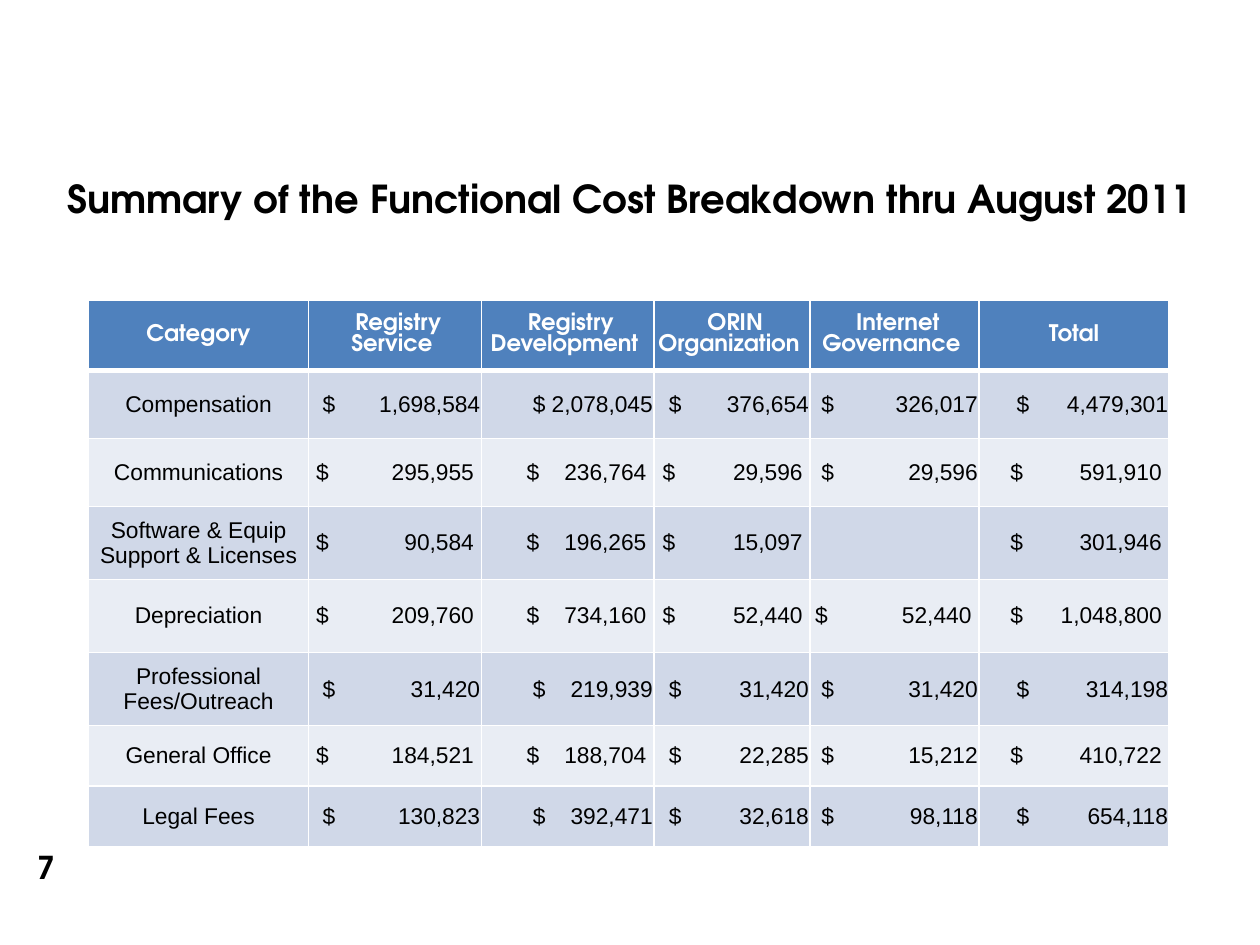
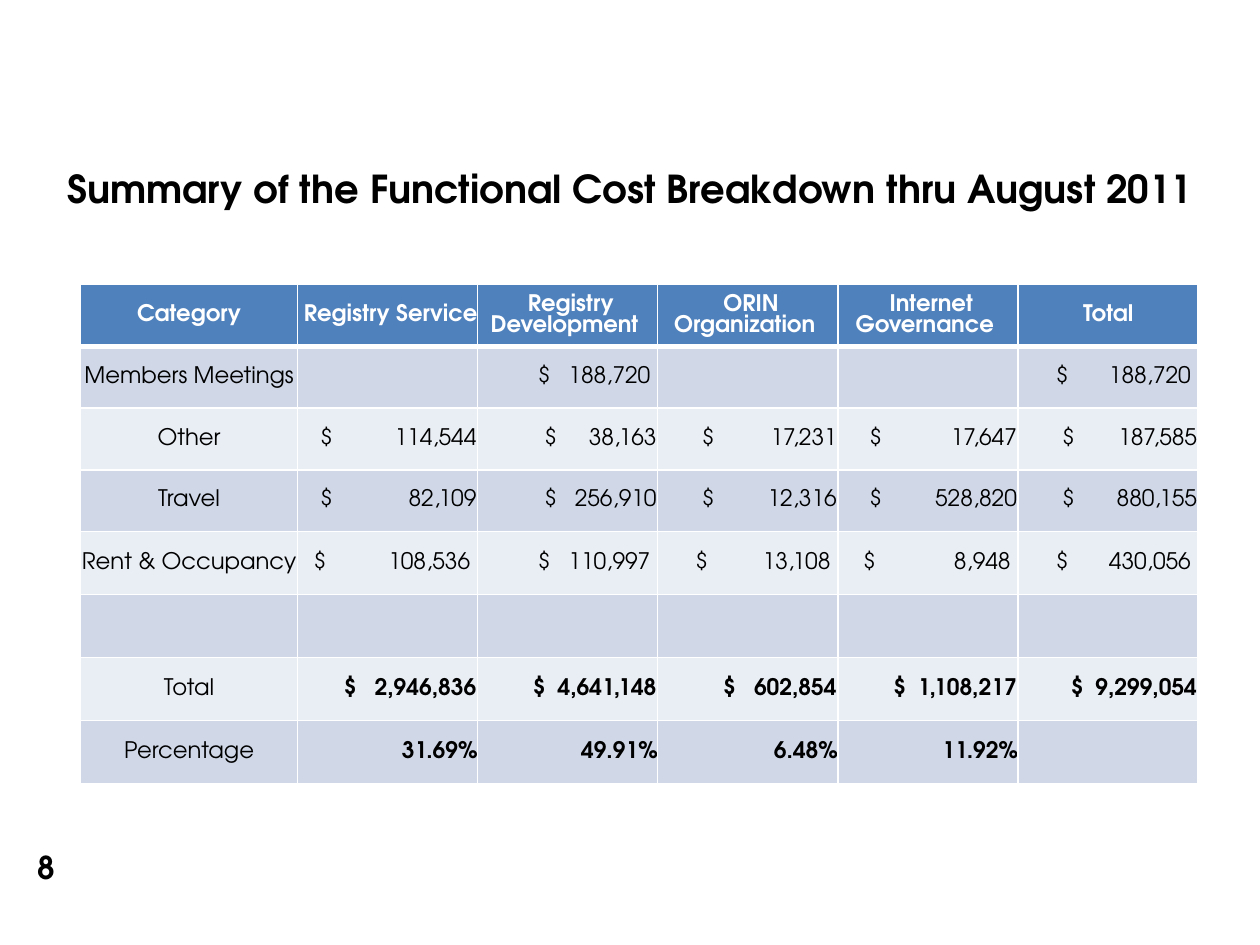
import pptx
import pptx.dml.color
import pptx.enum.text
import pptx.oxml
import pptx.oxml.ns
import pptx.util
from dataclasses import dataclass

EMU_PER_PX = 9144  # 100 px to the inch
ALIGN = pptx.enum.text.PP_ALIGN
MIDDLE = pptx.enum.text.MSO_ANCHOR.MIDDLE


@dataclass(frozen=True)
class Theme:
    head_fill: str = "4F81BD"
    bands: tuple = ("D0D8E8", "E9EDF4")
    white: str = "FFFFFF"
    black: str = "000000"
    display: str = "TeX Gyre Adventor"
    plain: str = "Arial"
    title_size: int = 22
    table_size: int = 13
    number_size: int = 18
    rule: int = 1
    head_rule: int = 3


THEME = Theme()
PAD = 5  # space kept after an amount that ends in "_"
TITLE = "Summary of the Functional Cost Breakdown thru August 2011"
HEADERS = ["Category", " Registry Service ", " Registry Development ",
           " ORIN Organization ", " Internet Governance ", "Total"]

# Each row: category, then one amount per column
COSTS = [
    ["Compensation", "1,698,584", "2,078,045", "376,654", "326,017", "4,479,301"],
    ["Communications", "295,955_", "236,764_", "29,596_", "29,596", "591,910_"],
    ["Software & Equip Support & Licenses", "90,584_", "196,265_", "15,097_", "", "301,946_"],
    ["Depreciation", "209,760_", "734,160_", "52,440_", "52,440_", "1,048,800_"],
    ["Professional Fees/Outreach", "31,420", "219,939", "31,420", "31,420", "314,198"],
    ["General Office", "184,521_", "188,704_", "22,285", "15,212", "410,722_"],
    ["Legal Fees", "130,823", "392,471", "32,618", "98,118", "654,118"],
]
MORE_COSTS = [
    ["Members Meetings", "", "188,720_", "", "", "188,720_"],
    ["Other", "114,544", "38,163", "17,231", "17,647", "187,585"],
    ["Travel", "82,109", "256,910", "12,316", "528,820", "880,155"],
    ["Rent & Occupancy", "108,536_", "110,997_", "13,108_", "8,948_", "430,056_"],
    [""] * 6,
    ["Total", "2,946,836", "4,641,148", "602,854", "1,108,217", "9,299,054"],
    ["Percentage", "31.69%", "49.91%", "6.48%", "11.92%", ""],
]

# dollars: distance of the $ sign from the left of each amount column
TABLES = [
    {"number": "7", "title": (108, 98), "at": (70, 238), "font": THEME.plain,
     "cols": [175, 137, 137, 124, 134, 151],
     "rows": [56, 54, 54, 58, 58, 58, 48, 48],
     "dollars": [11, 41, 12, 9, 30], "data": COSTS, "bold": {}},
    {"number": "8", "title": (92, 114), "at": (64, 226), "font": THEME.display,
     "cols": [172] + [143] * 5,
     "rows": [49] * 4 + [50] * 4,
     "dollars": [18, 53, 35, 25, 35], "data": MORE_COSTS,
     "bold": {"Total": [37, 44, 52, 44, 42], "Percentage": [0] * 5}},
]


def px(n):
    return pptx.util.Emu(n * EMU_PER_PX)


def rgb(value):
    return pptx.dml.color.RGBColor.from_string(value)


def set_format(obj, **values):
    for name, value in values.items():
        setattr(obj, name, value)


def write(p, text, size, font, color=THEME.black, bold=False, align=ALIGN.LEFT):
    p.alignment = align
    r = p.add_run()
    r.text = text
    set_format(r.font, size=pptx.util.Pt(size), name=font, bold=bold)
    r.font.color.rgb = rgb(color)


def add_text(s, box, text, size, align=ALIGN.LEFT, **frame):
    sp = s.shapes.add_textbox(*map(px, box))
    tf = sp.text_frame
    set_format(tf, **frame)
    write(tf.paragraphs[0], text, size, THEME.display, bold=True, align=align)


def add_tab_stop(p, position):
    tabs = pptx.oxml.parse_xml(
        f'<a:tabLst {pptx.oxml.ns.nsdecls("a")}>'
        f'<a:tab pos="{px(position)}" algn="r"/></a:tabLst>')
    p._p.get_or_add_pPr().append(tabs)


def style_cell(cell, fill, top, bottom):
    cell.fill.solid()
    cell.fill.fore_color.rgb = rgb(fill)
    set_format(cell, vertical_anchor=MIDDLE, margin_left=0, margin_right=0,
               margin_top=0, margin_bottom=0)
    # Borders come before the fill in the cell properties
    widths = {"lnL": THEME.rule, "lnR": THEME.rule, "lnT": top, "lnB": bottom}
    for i, (tag, width) in enumerate(widths.items()):
        cell._tc.get_or_add_tcPr().insert(i, pptx.oxml.parse_xml(
            f'<a:{tag} {pptx.oxml.ns.nsdecls("a")} w="{pptx.util.Pt(width)}">'
            f'<a:solidFill><a:srgbClr val="{THEME.white}"/></a:solidFill></a:{tag}>'))


def write_amount(cell, amount, width, dollar, **look):
    p = cell.text_frame.paragraphs[0]
    if amount.endswith("%"):
        write(p, amount, THEME.table_size, align=ALIGN.RIGHT, **look)
        return
    pad = PAD if amount.endswith("_") else 0
    left = dollar - pad
    cell.margin_left = px(left)
    add_tab_stop(p, width - left - pad - 1)
    write(p, "$\t" + amount.rstrip("_"), THEME.table_size, **look)


def add_cost_table(s, at, cols, rows, font, dollars, data, bold):
    size = sum(cols), sum(rows)
    table = s.shapes.add_table(len(rows), len(cols), *map(px, at + size)).table
    for column, width in zip(table.columns, cols):
        column.width = px(width)
    for row, height in zip(table.rows, rows):
        row.height = px(height)

    # Header row
    for c, label in enumerate(HEADERS):
        cell = table.cell(0, c)
        style_cell(cell, THEME.head_fill, THEME.rule, THEME.head_rule)
        write(cell.text_frame.paragraphs[0], label, THEME.table_size, THEME.display,
              THEME.white, True, ALIGN.CENTER)

    # Banded cost rows
    for r, values in enumerate(data, 1):
        category = values[0]
        top = THEME.head_rule if r == 1 else THEME.rule
        offsets = bold.get(category, dollars)
        for c, value in enumerate(values):
            cell = table.cell(r, c)
            style_cell(cell, THEME.bands[(r - 1) % 2], top, THEME.rule)
            if not value:
                continue
            if c == 0:
                write(cell.text_frame.paragraphs[0], value, THEME.table_size, font,
                      align=ALIGN.CENTER)
            else:
                write_amount(cell, value, cols[c], offsets[c - 1],
                             font=font, bold=category in bold)


def add_cost_slide(prs, number, title, **table):
    s = prs.slides.add_slide(prs.slide_layouts[6])
    top, height = title
    add_text(s, (0, top, 1000, height), TITLE, THEME.title_size, ALIGN.CENTER,
             word_wrap=True, vertical_anchor=MIDDLE)
    add_cost_table(s, **table)
    add_text(s, (20, 668, 34, 40), number, THEME.number_size, word_wrap=False,
             auto_size=pptx.enum.text.MSO_AUTO_SIZE.SHAPE_TO_FIT_TEXT)


def main():
    prs = pptx.Presentation()
    set_format(prs, slide_width=px(1000), slide_height=px(750))
    for table in TABLES:
        add_cost_slide(prs, **table)
    prs.save("out.pptx")


if __name__ == "__main__":
    main()
